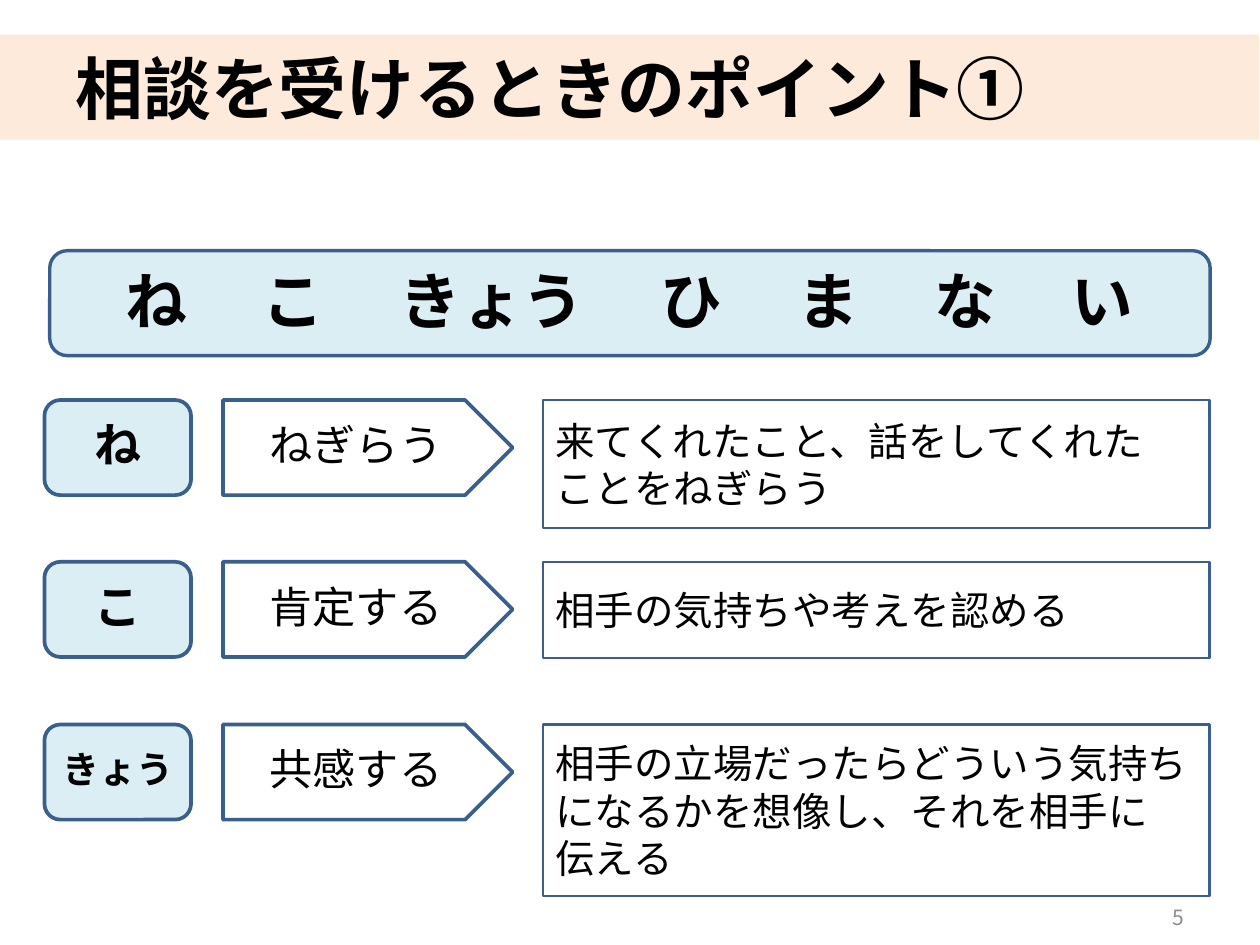
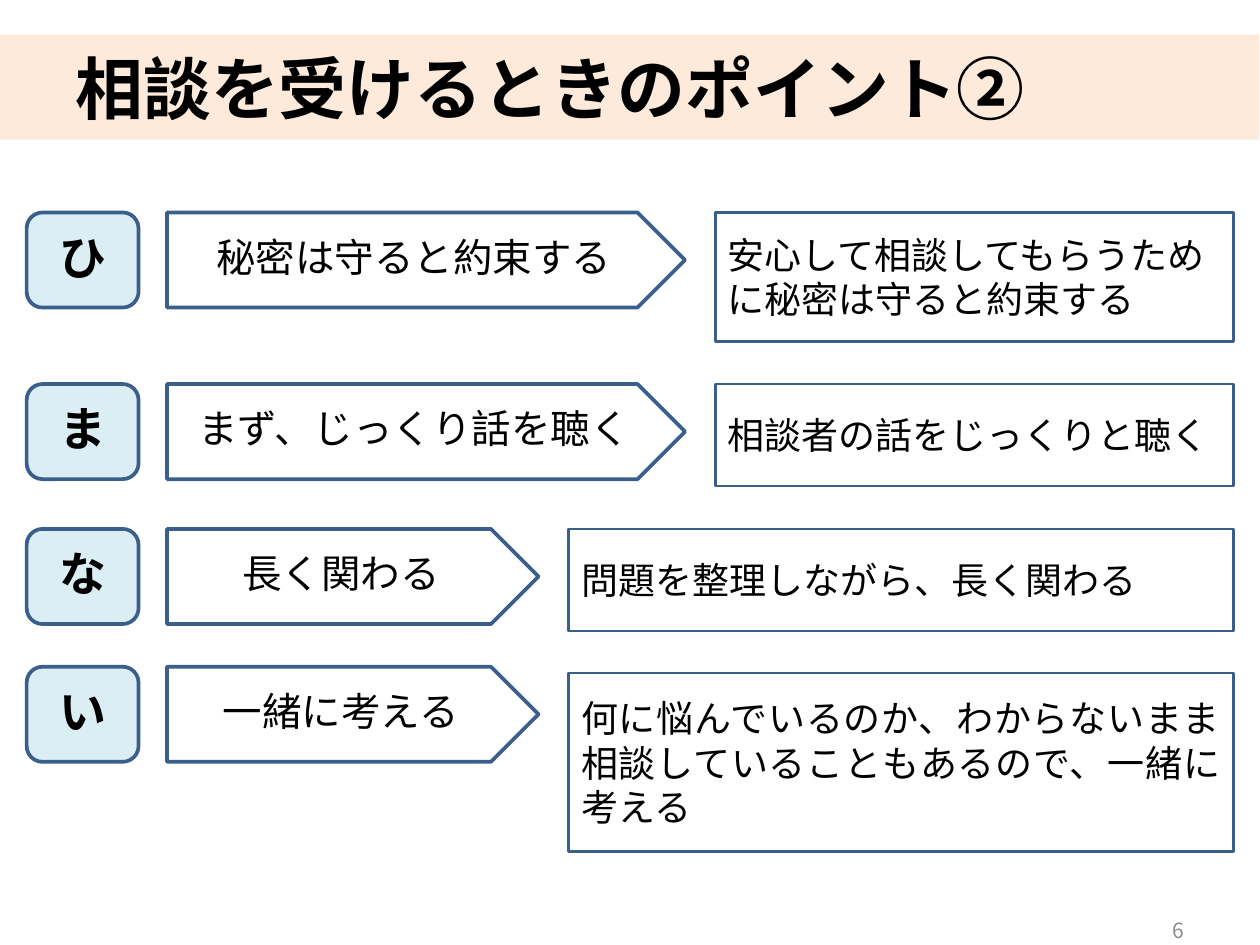
from lxml import etree
from pptx import Presentation
from pptx.dml.color import RGBColor
from pptx.enum.shapes import MSO_SHAPE as SHAPE
from pptx.enum.text import MSO_ANCHOR as ANCHOR, PP_ALIGN as ALIGN
from pptx.oxml.ns import qn
from pptx.util import Inches, Pt

FONT = "Noto Sans CJK JP"
BLACK = RGBColor(0x00, 0x00, 0x00)
WHITE = RGBColor(0xFF, 0xFF, 0xFF)
GRAY = RGBColor(0x8C, 0x8C, 0x8C)
PEACH = RGBColor(0xFD, 0xEA, 0xDA)
PALE_BLUE = RGBColor(0xDB, 0xEE, 0xF4)
BLUE = RGBColor(0x3A, 0x5F, 0x8C)

ROW_HEIGHT = 1.07
COLUMN_GAP = 0.34
TEXT_INSETS = (0.14, 0.07, 0.14, 0.07)
LABEL_INSETS = (0.14, 0, 0.14, 0.08)


def write_text(shape, text, size, color=BLACK, bold=False, align=ALIGN.LEFT, insets=TEXT_INSETS):
    frame = shape.text_frame
    frame.word_wrap = True
    frame.vertical_anchor = ANCHOR.MIDDLE
    frame.margin_left, frame.margin_top, frame.margin_right, frame.margin_bottom = map(Inches, insets)
    paragraph = frame.paragraphs[0]
    paragraph.alignment = align
    run = paragraph.add_run()
    run.text = text
    font = run.font
    font.name, font.size, font.bold = FONT, Pt(size), bold
    font.color.rgb = color
    etree.SubElement(font._element, qn("a:ea"), typeface=FONT)
    return paragraph


def add_box(slide, kind, left, top, width, height, fill=None, line_width=None):
    shape = slide.shapes.add_shape(kind, Inches(left), Inches(top), Inches(width), Inches(height))
    shape.shadow.inherit = False
    if fill is None:
        shape.fill.background()
    else:
        shape.fill.solid()
        shape.fill.fore_color.rgb = fill
    if line_width is None:
        shape.line.fill.background()
    else:
        shape.line.color.rgb = BLUE
        shape.line.width = Pt(line_width)
    return shape


# fmt: off
pages = [
    {
        "title": "相談を受けるときのポイント①", "number": "5", "number_top": 10.03,
        "label_left": 0.5, "label_width": 1.65, "arrow_left": 2.51, "right": 13.61,
        "arrow_size": 35, "detail_size": 32,
        "rows": [
            (4.5, "ね", 38, "ねぎらう", 3.26, 4.5, 1.44, "来てくれたこと、話をしてくれた　ことをねぎらう", ALIGN.LEFT),
            (6.32, "こ", 38, "肯定する", 3.26, 6.32, 1.08, "相手の気持ちや考えを認める", ALIGN.LEFT),
            (8.15, "きょう", 30, "共感する", 3.26, 8.15, 1.93, "相手の立場だったらどういう気持ちになるかを想像し、それを相手に　伝える", ALIGN.LEFT),
        ],
    },
    {
        "title": "相談を受けるときのポイント②", "number": "6", "number_top": 10.18,
        "label_left": 0.3, "label_width": 1.26, "arrow_left": 1.88, "right": 13.88,
        "arrow_size": 32, "detail_size": 30,
        "rows": [
            (2.39, "ひ", 38, "秘密は守ると約束する", 5.83, 2.39, 1.45, "安心して相談してもらうために秘密は守ると約束する", ALIGN.LEFT),
            (4.32, "ま", 38, "まず、じっくり話を聴く", 5.83, 4.32, 1.15, "相談者の話をじっくりと聴く", ALIGN.LEFT),
            (5.95, "な", 38, "長く関わる", 4.18, 5.95, 1.15, "問題を整理しながら、長く関わる", ALIGN.LEFT),
            (7.5, "い", 38, "一緒に考える", 4.18, 7.57, 2.01, "何に悩んでいるのか、わからないまま相談していることもあるので、一緒に考える", ALIGN.JUSTIFY),
        ],
    },
]
# fmt: on

presentation = Presentation()
presentation.slide_width = Inches(14.18)
presentation.slide_height = Inches(10.63)

for page in pages:
    slide = presentation.slides.add_slide(presentation.slide_layouts[6])
    title_band = add_box(slide, SHAPE.RECTANGLE, 0, 0.39, 14.17, 1.18, PEACH)
    write_text(title_band, page["title"], 55, bold=True, insets=(0.85, 0.07, 0.14, 0.07))

    for top, label, label_size, action, arrow_width, detail_top, detail_height, detail, align in page["rows"]:
        label_box = add_box(slide, SHAPE.ROUNDED_RECTANGLE, page["label_left"], top,
                            page["label_width"], ROW_HEIGHT, PALE_BLUE, 3)
        write_text(label_box, label, label_size, bold=True, align=ALIGN.CENTER, insets=LABEL_INSETS)

        arrow = add_box(slide, SHAPE.PENTAGON, page["arrow_left"], top, arrow_width, ROW_HEIGHT, WHITE, 3)
        write_text(arrow, action, page["arrow_size"], align=ALIGN.CENTER, insets=LABEL_INSETS)

        detail_left = page["arrow_left"] + arrow_width + COLUMN_GAP
        detail_box = add_box(slide, SHAPE.RECTANGLE, detail_left, detail_top,
                             page["right"] - detail_left, detail_height, line_width=2)
        write_text(detail_box, detail, page["detail_size"], align=align)

    number_box = slide.shapes.add_textbox(Inches(10.16), Inches(page["number_top"]), Inches(3.31), Inches(0.57))
    write_text(number_box, page["number"], 17, color=GRAY, align=ALIGN.RIGHT)

syllables = [row[1] for page in pages for row in page["rows"]]
banner = add_box(presentation.slides[0], SHAPE.ROUNDED_RECTANGLE, 0.56, 2.82, 13.06, 1.18, PALE_BLUE, 2.75)
banner_paragraph = write_text(banner, "\t".join(syllables), 50, bold=True, insets=(0.79, 0, 0.14, 0.08))
tab_list = etree.SubElement(banner_paragraph._p.get_or_add_pPr(), qn("a:tabLst"))
tab_position = 0
for syllable in syllables[:-1]:
    tab_position += len(syllable) * 50 / 72 + 0.85
    etree.SubElement(tab_list, qn("a:tab"), pos=str(Inches(tab_position)), algn="l")

presentation.save("out.pptx")
